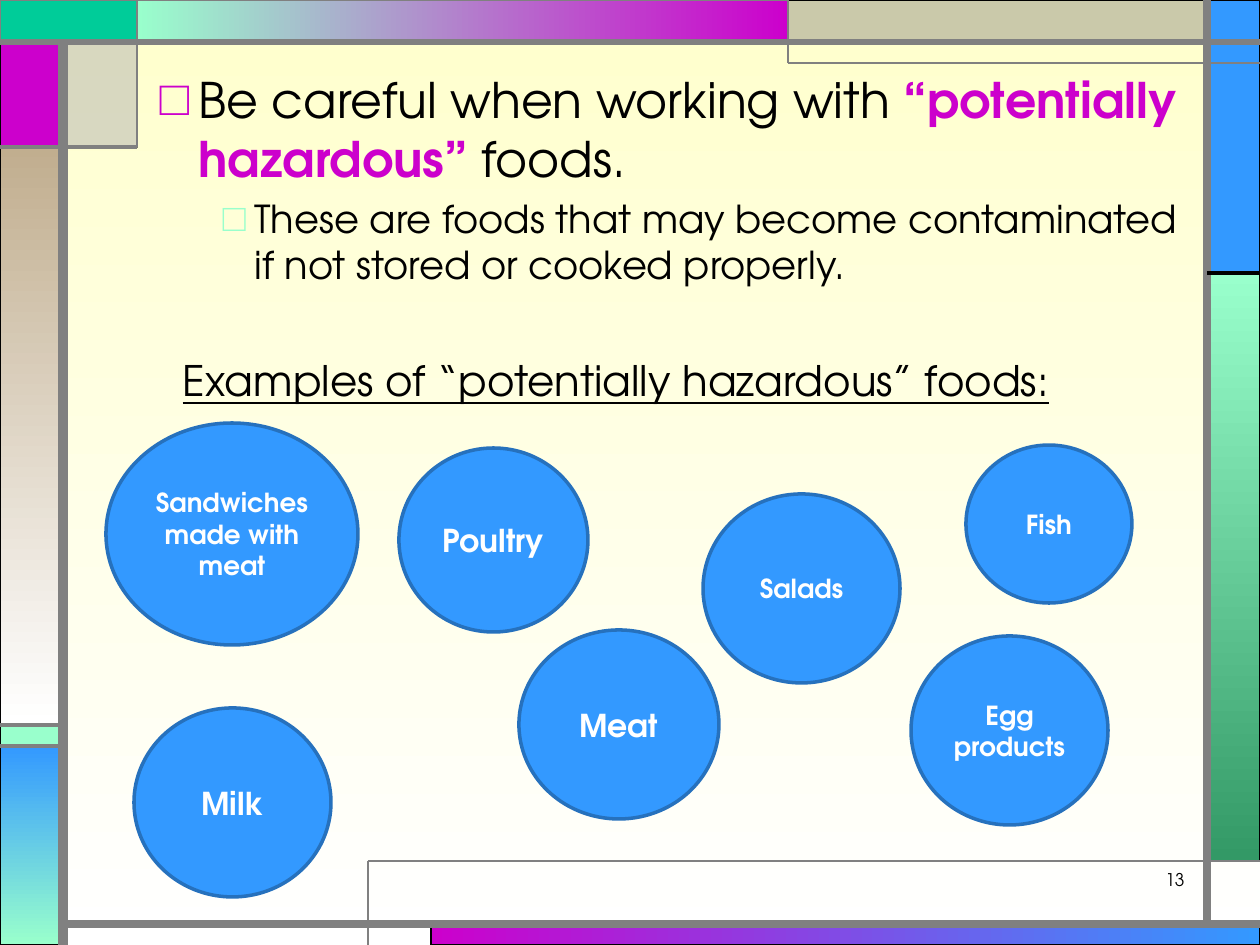
from lxml import etree
from pptx import Presentation
from pptx.dml.color import RGBColor
from pptx.enum.shapes import MSO_CONNECTOR, MSO_SHAPE
from pptx.enum.text import MSO_ANCHOR, MSO_AUTO_SIZE, PP_ALIGN
from pptx.oxml.ns import qn
from pptx.util import Pt

RECTANGLE, ELLIPSE = MSO_SHAPE.RECTANGLE, MSO_SHAPE.OVAL
STRAIGHT = MSO_CONNECTOR.STRAIGHT
MIDDLE, NO_FIT = MSO_ANCHOR.MIDDLE, MSO_AUTO_SIZE.NONE
CENTER, RIGHT = PP_ALIGN.CENTER, PP_ALIGN.RIGHT

PX = 914400 / 126
WIDTH, HEIGHT = 1260, 945
FONT = "TeX Gyre Adventor"
COLORS = {
    "cream": "FFFFCC", "white": "FFFFFF", "black": "000000", "magenta": "CC00CC",
    "blue": "3399FF", "dark blue": "2671BD", "mint": "99FFCC", "green": "339966",
    "teal": "00CC99", "khaki": "CAC9AA", "tan": "C1AE8F", "silver": "B2B2B2",
    "gray": "808080",
}
ACROSS, DOWN = 0, 270  # gradient angles, counter-clockwise

# Edges of the frame
LEFT, RIGHT_EDGE, TOP, BOTTOM = 63, 1207, 42, 924
CORNER_X, CORNER_Y = 137, 147
TAB_X, TAB_Y = 788, 63
BLUE_END, FOOT_X, FOOT_Y = 273, 368, 861
MINT_TOP, MINT_END = 725, 746

# left, top, right, bottom, fill (one colour, or two colours and an angle), line, width
PANELS = [
    (431, BOTTOM, WIDTH, HEIGHT, ("magenta", "blue", ACROSS), "black", 0.75),
    (RIGHT_EDGE, BLUE_END, WIDTH, FOOT_Y, ("mint", "green", DOWN), "black", 0.75),
    (0, MINT_TOP, LEFT, MINT_END, "mint", "black", 0.75),
    (0, MINT_END, LEFT, HEIGHT, ("blue", "mint", DOWN), "black", 0.75),
    (RIGHT_EDGE, 0, WIDTH, BLUE_END, "blue", "black", 0.75),
    (TAB_X, 0, RIGHT_EDGE, TOP, "khaki", "black", 0.75),
    (LEFT, TOP, CORNER_X, CORNER_Y, "silver", "black", 0.75),
    (0, CORNER_Y, LEFT, MINT_TOP, ("tan", "white", DOWN), "black", 0.75),
    (0, TOP, LEFT, CORNER_Y, "magenta", "black", 0.75),
    (0, 0, CORNER_X, TOP, "teal", "gray", 1.5),
    (CORNER_X, 0, TAB_X, TOP, ("mint", "magenta", ACROSS), "gray", 0.75),
]
OPACITY = {"silver": 50}

# from x, from y, to x, to y, colour, width
RULES = [
    (LEFT, HEIGHT, LEFT, TOP, "gray", 6),
    (LEFT, BOTTOM, WIDTH, BOTTOM, "gray", 4.5),
    (RIGHT_EDGE, BOTTOM, RIGHT_EDGE, 0, "gray", 4.5),
    (0, TOP, WIDTH, TOP, "gray", 3),
    (WIDTH, TAB_Y, TAB_X, TAB_Y, "gray", 1.5),
    (TAB_X, TAB_Y, TAB_X, 0, "gray", 1.5),
    (RIGHT_EDGE, BLUE_END, WIDTH, BLUE_END, "black", 2.25),
    (CORNER_X, 0, CORNER_X, CORNER_Y, "gray", 1.5),
    (CORNER_X, CORNER_Y, 0, CORNER_Y, "gray", 2.25),
    (FOOT_X, HEIGHT, FOOT_X, FOOT_Y, "gray", 1.5),
    (FOOT_X, FOOT_Y, WIDTH, FOOT_Y, "gray", 1.5),
    (LEFT, MINT_TOP, 0, MINT_TOP, "gray", 2.25),
    (LEFT, MINT_END, 0, MINT_END, "gray", 2.25),
]

BODY_BOX = (84, 63, 1113, 781)
BODY = [
    {"level": 0, "margin": 102, "indent": -39, "bullet": "magenta", "runs": [
        ("Be careful when working with ", {"size": 28}),
        ("“potentially hazardous”", {"size": 28, "color": "magenta", "bold": True}),
        (" foods.", {"size": 28})]},
    {"level": 1, "margin": 158, "indent": -32, "bullet": "mint", "runs": [
        ("These are foods that may become contaminated if not stored or cooked properly.",
         {"size": 22})]},
    {"level": 0, "margin": 86, "indent": 0, "bullet": None, "space_before": 38.5, "runs": [
        ("Examples of “potentially hazardous” foods:", {"size": 24, "underline": True})]},
]

# label, left, top, width, height, text size
FOODS = [
    ("Meat", 519, 630, 200, 189, 18),
    ("Poultry", 399, 448, 189, 184, 18),
    ("Milk", 134, 708, 197, 189, 18),
    ("Egg products", 911, 636, 197, 189, 15),
    ("Fish", 966, 445, 166, 158, 15),
    ("Salads", 703, 494, 197, 189, 15),
    ("Sandwiches made with meat", 106, 423, 252, 222, 15),
]
PAGE_NUMBER, PAGE_BOX = "13", (903, 863, 294, 53)


def emu(*lengths):
    return [round(length * PX) for length in lengths]


def rgb(name):
    return RGBColor.from_string(COLORS[name])


def paint(fill, paint_spec):
    """Fill with one colour name, or with (start, end, angle)."""
    if isinstance(paint_spec, str):
        fill.solid()
        fill.fore_color.rgb = rgb(paint_spec)
        return
    *names, angle = paint_spec
    fill.gradient()
    fill.gradient_angle = angle
    for stop, name in zip(fill.gradient_stops, names):
        stop.color.rgb = rgb(name)


def set_line(line, color, width):
    line.color.rgb = rgb(color)
    line.width = Pt(width)


def add_run(paragraph, text, size, color="black", **format_values):
    run = paragraph.add_run()
    run.text = text
    values = {"name": FONT, "size": Pt(size), **format_values}
    for attribute, value in values.items():
        setattr(run.font, attribute, value)
    run.font.color.rgb = rgb(color)


def add_filled(slide, kind, box, fill, line, width):
    shape = slide.shapes.add_shape(kind, *emu(*box))
    shape.shadow.inherit = False
    paint(shape.fill, fill)
    set_line(shape.line, line, width)
    return shape


def add_panel(slide, left, top, right, bottom, fill, line, width):
    box = (left, top, right - left, bottom - top)
    shape = add_filled(slide, RECTANGLE, box, fill, line, width)
    if fill in OPACITY:
        color = shape.fill._xPr.find(qn("a:solidFill"))[0]
        etree.SubElement(color, qn("a:alpha"), val=str(OPACITY[fill] * 1000))


def add_rule(slide, x1, y1, x2, y2, color, width):
    connector = slide.shapes.add_connector(STRAIGHT, *emu(x1, y1, x2, y2))
    set_line(connector.line, color, width)
    etree.SubElement(connector._element.spPr, qn("a:effectLst"))


def add_food(slide, label, left, top, width, height, size):
    shape = add_filled(slide, ELLIPSE, (left, top, width, height), "blue", "dark blue", 2)
    frame = shape.text_frame
    frame.word_wrap, frame.vertical_anchor = True, MIDDLE
    frame.paragraphs[0].alignment = CENTER
    add_run(frame.paragraphs[0], label, size, "white", bold=True)


def set_bullet(paragraph, margin, indent, color):
    properties = paragraph._p.get_or_add_pPr()
    for key, value in zip(("marL", "indent"), emu(margin, indent)):
        properties.set(key, str(value))
    if color is None:
        etree.SubElement(properties, qn("a:buNone"))
        return
    bullet_color = etree.SubElement(properties, qn("a:buClr"))
    etree.SubElement(bullet_color, qn("a:srgbClr"), val=COLORS[color])
    etree.SubElement(properties, qn("a:buChar"), char="□")


def fill_body(body):
    body.left, body.top, body.width, body.height = emu(*BODY_BOX)
    frame = body.text_frame
    frame.auto_size = NO_FIT
    for index, item in enumerate(BODY):
        paragraph = frame.add_paragraph() if index else frame.paragraphs[0]
        paragraph.level = item["level"]
        if "space_before" in item:
            paragraph.space_before = Pt(item["space_before"])
        set_bullet(paragraph, item["margin"], item["indent"], item["bullet"])
        for text, format_values in item["runs"]:
            add_run(paragraph, text, **format_values)


def main():
    presentation = Presentation()
    presentation.slide_width, presentation.slide_height = emu(WIDTH, HEIGHT)
    slide = presentation.slides.add_slide(presentation.slide_layouts[1])
    tree = slide.shapes._spTree
    tree.remove(slide.shapes.title._element)
    body = slide.placeholders[1]
    paint(slide.background.fill, ("cream", "white", DOWN))

    for panel in PANELS:
        add_panel(slide, *panel)
    for rule in RULES:
        add_rule(slide, *rule)
    fill_body(body)
    tree.append(body._element)  # in front of the frame

    page = slide.shapes.add_textbox(*emu(*PAGE_BOX)).text_frame
    page.word_wrap = True
    page.paragraphs[0].alignment = RIGHT
    add_run(page.paragraphs[0], PAGE_NUMBER, 10)
    for food in FOODS:
        add_food(slide, *food)
    presentation.save("out.pptx")


if __name__ == "__main__":
    main()
